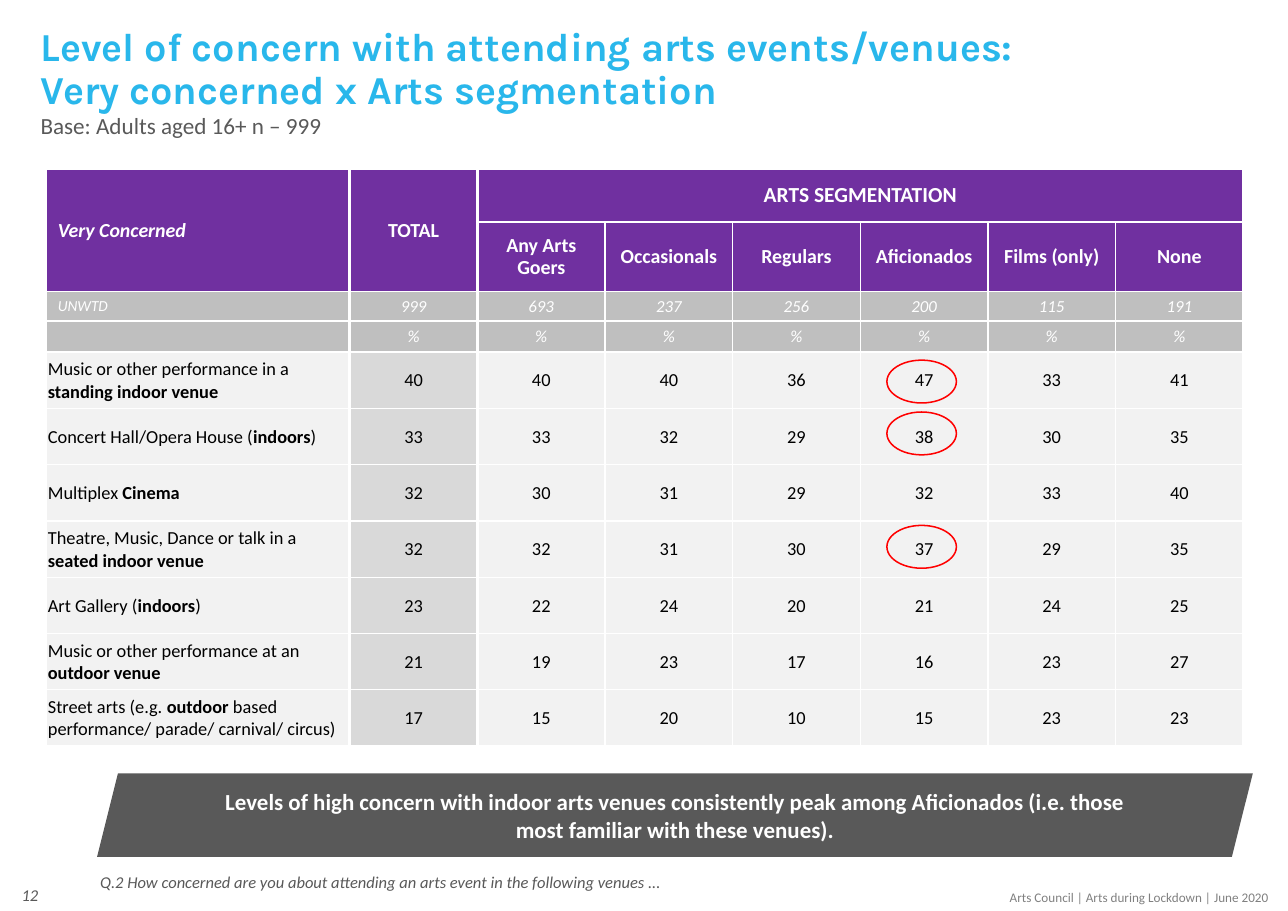
import dataclasses

import pptx
import pptx.dml.color
import pptx.enum.shapes
import pptx.enum.text
import pptx.oxml
import pptx.oxml.ns
import pptx.slide
import pptx.table
import pptx.text.text
import pptx.util

Pt = pptx.util.Pt
ALIGN = pptx.enum.text.PP_ALIGN
ANCHOR = pptx.enum.text.MSO_ANCHOR
SHAPE = pptx.enum.shapes.MSO_SHAPE

PURPLE, WHITE, BLACK = "7030A0", "FFFFFF", "000000"
SILVER, TOTAL_GREY, PALE = "BFBFBF", "D9D9D9", "F2F2F2"
CHARCOAL, GREY, SKY, RED = "595959", "808080", "29B7EB", "FF0000"

TABLE_LEFT, TABLE_TOP = 30.6, 111
COLUMN_WIDTHS = [198] + [83.4] * 7
ROW_HEIGHTS = [34, 45.5, 19.3, 20.3] + [36.8] * 7
THICK_EDGES = (1, 2, 8)
WIDE_MARGINS = (7.2, 3.6, 7.2, 3.6)
TIGHT_MARGINS = (0.7, 0.7, 0.7, 0)


@dataclasses.dataclass(frozen=True)
class Style:
    size: float
    color: str
    bold: bool = False
    italic: bool = False
    font: str = "Calibri"
    align: ALIGN = ALIGN.LEFT
    line_spacing: float = 1.0


@dataclasses.dataclass(frozen=True)
class Caption:
    text: str
    left: float
    top: float
    width: float
    height: float
    style: Style
    anchor: ANCHOR = ANCHOR.TOP


@dataclasses.dataclass(frozen=True)
class Venue:
    label: str
    scores: tuple[int, ...]


TITLE = Style(25.9, SKY, bold=True, font="Karla", line_spacing=0.9)
HEADER = Style(13, WHITE, bold=True, align=ALIGN.CENTER, line_spacing=0.9)
CORNER = dataclasses.replace(HEADER, italic=True, align=ALIGN.LEFT)
GROUP = dataclasses.replace(HEADER, size=14)
COUNT = Style(11, WHITE, italic=True, align=ALIGN.CENTER)
COUNT_LABEL = Style(10, WHITE, italic=True)
LABEL = Style(12, BLACK)
SCORE = Style(12, BLACK, align=ALIGN.CENTER)
BANNER = Style(15, WHITE, bold=True, align=ALIGN.CENTER)

SEGMENTS = ["Any Arts Goers", "Occasionals", "Regulars", "Aficionados", "Films (only)", "None"]
COUNTS = [999, 693, 237, 256, 200, 115, 191]
VENUES = [
    Venue("Music or other performance in a *standing indoor venue*", (40, 40, 40, 36, 47, 33, 41)),
    Venue("Concert Hall/Opera House (*indoors*)", (33, 33, 32, 29, 38, 30, 35)),
    Venue("Multiplex *Cinema*", (32, 30, 31, 29, 32, 33, 40)),
    Venue("Theatre, Music, Dance or talk in a *seated indoor venue*", (32, 32, 31, 30, 37, 29, 35)),
    Venue("Art Gallery (*indoors*)", (23, 22, 24, 20, 21, 24, 25)),
    Venue("Music or other performance at an *outdoor venue*", (21, 19, 23, 17, 16, 23, 27)),
    Venue("Street arts (e.g. *outdoor* based performance/ parade/ carnival/ circus)",
          (17, 15, 20, 10, 15, 23, 23)),
]
CAPTIONS = [
    Caption("Arts Council | Arts during Lockdown | June 2020", 555, 577.4, 281.6, 18,
            Style(8.6, GREY, align=ALIGN.RIGHT)),
    Caption("12", -4.3, 568.8, 36.4, 31.7,
            Style(10.8, CHARCOAL, italic=True, align=ALIGN.RIGHT), ANCHOR.MIDDLE),
    Caption("Base: Adults aged 16+ n – 999", 19.4, 71.3, 471.6, 28,
            Style(15.1, CHARCOAL, line_spacing=0.9)),
    Caption("Q.2 How concerned are you about attending an arts event in the following venues ...",
            58.3, 568, 473.8, 24.5, Style(10.8, CHARCOAL, italic=True, line_spacing=0.9)),
]
HIGHLIGHT_TOPS = [235.4, 269.3, 343.4]


def rgb(value: str) -> pptx.dml.color.RGBColor:
    return pptx.dml.color.RGBColor.from_string(value)


def write(frame: pptx.text.text.TextFrame, text: str, style: Style) -> None:
    para = frame.paragraphs[0]
    para.alignment = style.align
    para.line_spacing = style.line_spacing
    para.space_before = Pt(0)
    for line_number, line in enumerate(text.split("\n")):
        if line_number:
            para.add_line_break()
        for part_number, part in enumerate(line.split("*")):
            if part:
                span = para.add_run()
                span.text = part
                span.font.name = style.font
                span.font.size = Pt(style.size)
                span.font.bold = style.bold or part_number % 2 == 1
                span.font.italic = style.italic
                span.font.color.rgb = rgb(style.color)
    if not text:
        para._p.get_or_add_endParaRPr().set("sz", str(round(style.size * 100)))


def draw_caption(page: pptx.slide.Slide, caption: Caption) -> None:
    box = page.shapes.add_textbox(Pt(caption.left), Pt(caption.top),
                                  Pt(caption.width), Pt(caption.height))
    box.text_frame.word_wrap = True
    box.text_frame.vertical_anchor = caption.anchor
    write(box.text_frame, caption.text, caption.style)


def draw_title(page: pptx.slide.Slide) -> None:
    title = page.shapes.title
    title.left, title.top, title.width, title.height = Pt(19.4), Pt(14.4), Pt(675.4), Pt(32.4)
    title.text_frame.auto_size = pptx.enum.text.MSO_AUTO_SIZE.NONE
    title.text_frame.word_wrap = True
    title.text_frame.vertical_anchor = ANCHOR.TOP
    write(title.text_frame,
          "Level of concern with attending arts events/venues:\nVery concerned x Arts segmentation",
          TITLE)


def format_cell(cell: pptx.table._Cell, column: int, fill: str,
                margins: tuple[float, float, float, float]) -> None:
    cell.vertical_anchor = ANCHOR.MIDDLE
    (cell.margin_left, cell.margin_top,
     cell.margin_right, cell.margin_bottom) = [Pt(margin) for margin in margins]
    widths = {"L": 2.25 if column in THICK_EDGES else 1,
              "R": 2.25 if column + 1 in THICK_EDGES else 1, "T": 1, "B": 1}
    properties = cell._tc.get_or_add_tcPr()
    for side, width in widths.items():
        properties.append(pptx.oxml.parse_xml(
            f'<a:ln{side} {pptx.oxml.ns.nsdecls("a")} w="{Pt(width)}"><a:solidFill>'
            f'<a:srgbClr val="{WHITE}"/></a:solidFill></a:ln{side}>'))
    cell.fill.solid()
    cell.fill.fore_color.rgb = rgb(fill)


def draw_table(page: pptx.slide.Slide) -> None:
    table = page.shapes.add_table(
        len(ROW_HEIGHTS), len(COLUMN_WIDTHS), Pt(TABLE_LEFT), Pt(TABLE_TOP),
        Pt(sum(COLUMN_WIDTHS)), Pt(sum(ROW_HEIGHTS))).table
    table.first_row = table.horz_banding = False
    for column, width in enumerate(COLUMN_WIDTHS):
        table.columns[column].width = Pt(width)
    rows = [
        ["Very Concerned", "TOTAL", "ARTS SEGMENTATION"] + [""] * 5,
        ["", ""] + SEGMENTS,
        ["UNWTD"] + COUNTS,
        [""] + ["%"] * 7,
    ] + [[venue.label, *venue.scores] for venue in VENUES]
    for row, texts in enumerate(rows):
        table.rows[row].height = Pt(ROW_HEIGHTS[row])
        for column, text in enumerate(texts):
            margins = TIGHT_MARGINS
            if row < 2:
                fill, margins = PURPLE, WIDE_MARGINS
                style = CORNER if column == 0 else GROUP if row == 0 and column > 1 else HEADER
            elif row < 4:
                fill, style = SILVER, COUNT
                if row == 2 and column == 0:
                    style, margins = COUNT_LABEL, (7.2, 0.7, 7.2, 0)
            else:
                fill = TOTAL_GREY if column == 1 else PALE
                style = SCORE if column else LABEL
            cell = table.cell(row, column)
            format_cell(cell, column, fill, margins)
            write(cell.text_frame, str(text), style)
    for column in (0, 1):
        table.cell(0, column).merge(table.cell(1, column))
    table.cell(0, 2).merge(table.cell(0, 7))


def draw_highlight(page: pptx.slide.Slide, top: float) -> None:
    ring = page.shapes.add_shape(SHAPE.OVAL, Pt(579.6), Pt(top), Pt(45.4), Pt(28))
    ring.shadow.inherit = False
    ring.fill.background()
    ring.line.color.rgb = rgb(RED)
    ring.line.width = Pt(1)


def draw_banner(page: pptx.slide.Slide) -> None:
    banner = page.shapes.add_shape(SHAPE.PARALLELOGRAM, Pt(63.4), Pt(505.4), Pt(755.3), Pt(54.7))
    banner.shadow.inherit = False
    banner.fill.solid()
    banner.fill.fore_color.rgb = rgb(CHARCOAL)
    banner.line.fill.background()
    frame = banner.text_frame
    frame.word_wrap = True
    frame.vertical_anchor = ANCHOR.MIDDLE
    frame.margin_left = frame.margin_top = frame.margin_right = frame.margin_bottom = 0
    write(frame, "Levels of high concern with indoor arts venues consistently peak among "
          "Aficionados (i.e. those most familiar with these venues).", BANNER)


def main() -> None:
    deck = pptx.Presentation()
    deck.slide_width, deck.slide_height = Pt(841.7), Pt(595.4)
    page = deck.slides.add_slide(deck.slide_layouts.get_by_name("Title Only"))
    draw_title(page)
    for caption in CAPTIONS:
        draw_caption(page, caption)
    draw_table(page)
    for top in HIGHLIGHT_TOPS:
        draw_highlight(page, top)
    draw_banner(page)
    deck.save("out.pptx")


if __name__ == "__main__":
    main()
